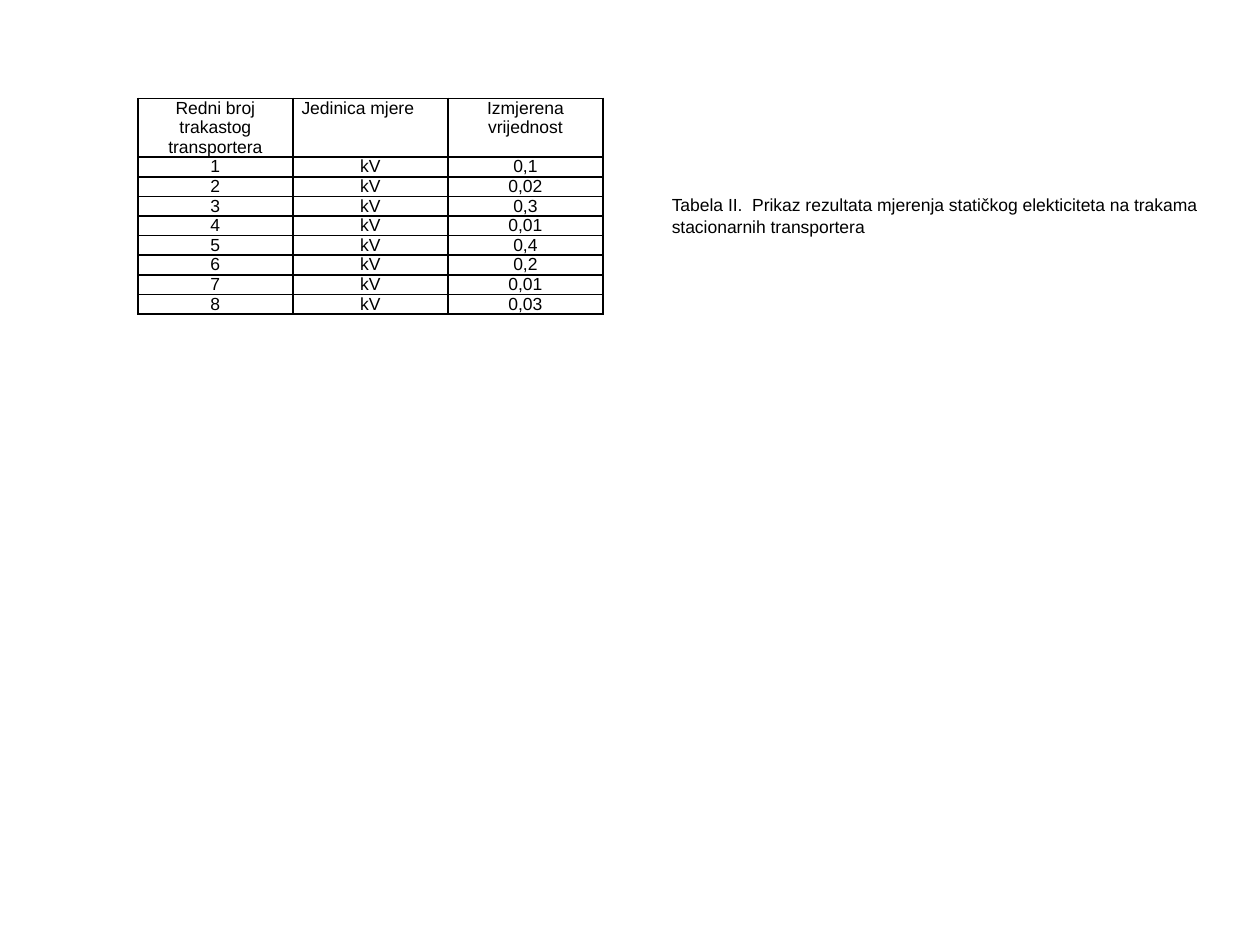
import pptx
import pptx.dml.color
import pptx.enum.text
import pptx.oxml
import pptx.oxml.ns
import pptx.util

Pt = pptx.util.Pt
ALIGN = pptx.enum.text.PP_ALIGN
COLORS = {"ink": "000000"}
FONT = "Arial"
FONT_SIZE = 10

HEADINGS = ["Redni broj trakastog transportera", "Jedinica mjere", "Izmjerena vrijednost"]
UNIT = "kV"
MEASURED = ["0,1", "0,02", "0,3", "0,01", "0,4", "0,2", "0,01", "0,03"]
CAPTION = [
    "Tabela II.  Prikaz rezultata mjerenja statičkog elekticiteta na trakama",
    "stacionarnih transportera",
]


def format_runs(paragraph):
    for run in paragraph.runs:
        run.font.name = FONT
        run.font.size = Pt(FONT_SIZE)
        run.font.color.rgb = pptx.dml.color.RGBColor.from_string(COLORS["ink"])


def add_borders(cell, width=1):
    properties = cell._tc.get_or_add_tcPr()
    for position, side in enumerate(("lnL", "lnR", "lnT", "lnB")):
        border = pptx.oxml.parse_xml(
            f'<a:{side} {pptx.oxml.ns.nsdecls("a")} w="{Pt(width)}"><a:solidFill>'
            f'<a:srgbClr val="{COLORS["ink"]}"/></a:solidFill></a:{side}>'
        )
        properties.insert(position, border)


def fill_cell(cell, text, alignment):
    cell.text = text
    cell.fill.background()
    cell.margin_left = cell.margin_right = Pt(5)
    cell.margin_top = cell.margin_bottom = 0
    paragraph = cell.text_frame.paragraphs[0]
    paragraph.alignment = alignment
    format_runs(paragraph)
    add_borders(cell)


def add_measurements(slide, left, top, column_width, line_height):
    records = [HEADINGS]
    records += [[str(number), UNIT, value] for number, value in enumerate(MEASURED, 1)]
    measurements = slide.shapes.add_table(
        len(records), len(HEADINGS), Pt(left), Pt(top),
        Pt(column_width * len(HEADINGS)), Pt(line_height * len(records)),
    ).table
    measurements.first_row = measurements.horz_banding = False
    for column in measurements.columns:
        column.width = Pt(column_width)
    for row_index, record in enumerate(records):
        # The first heading takes three lines
        lines = 3 if row_index == 0 else 1
        measurements.rows[row_index].height = Pt(line_height * lines)
        for column_index, text in enumerate(record):
            justified = row_index == 0 and column_index == 1
            alignment = ALIGN.JUSTIFY if justified else ALIGN.CENTER
            fill_cell(measurements.cell(row_index, column_index), text, alignment)


def add_caption(slide, left, top, width, height):
    frame = slide.shapes.add_textbox(Pt(left), Pt(top), Pt(width), Pt(height)).text_frame
    frame.word_wrap = False
    frame.auto_size = pptx.enum.text.MSO_AUTO_SIZE.SHAPE_TO_FIT_TEXT
    frame.vertical_anchor = pptx.enum.text.MSO_ANCHOR.MIDDLE
    frame.text = "\n".join(CAPTION)
    for paragraph in frame.paragraphs:
        paragraph.alignment = ALIGN.LEFT
        paragraph.line_spacing = 1.07
        format_runs(paragraph)


def main():
    presentation = pptx.Presentation()
    presentation.slide_width, presentation.slide_height = Pt(720), Pt(540)
    slide = presentation.slides.add_slide(presentation.slide_layouts[6])

    # Measured values of the eight conveyors
    add_measurements(slide, left=78.75, top=56.25, column_width=88.6, line_height=11.2)

    # Caption beside the table
    add_caption(slide, left=376.8, top=106.8, width=321, height=31.7)

    presentation.save("out.pptx")


if __name__ == "__main__":
    main()
